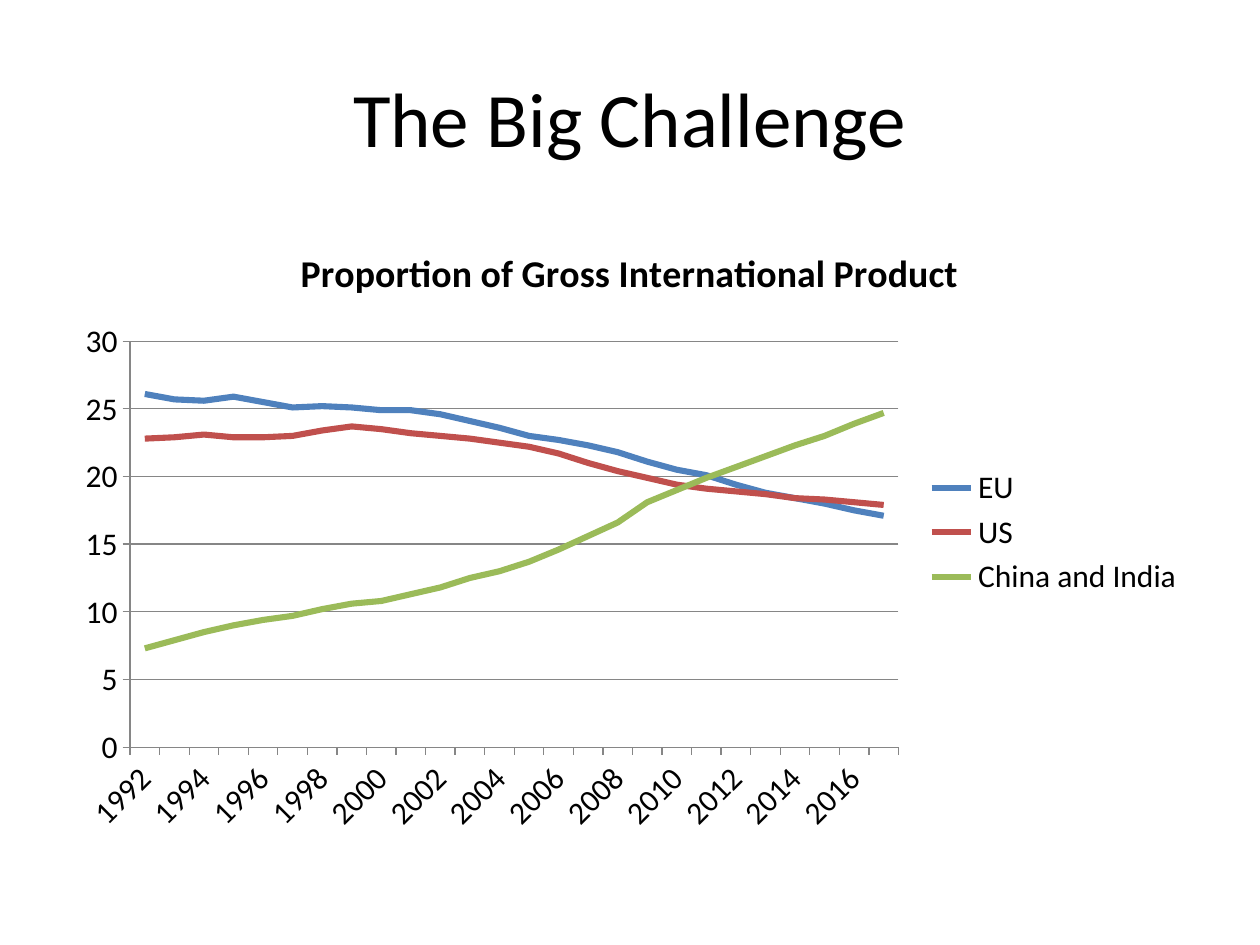
import pptx
import pptx.chart.data
import pptx.dml.color
import pptx.enum.chart
import pptx.enum.text
import pptx.util
from pptx.util import Pt

# Content
HEADING = "The Big Challenge"
CHART_TITLE = "Proportion of Gross International Product"
YEARS = range(1992, 2018)
SHARES = {
    "EU": [26.1, 25.7, 25.6, 25.9, 25.5, 25.1, 25.2, 25.1, 24.9, 24.9, 24.6, 24.1, 23.6,
           23, 22.7, 22.3, 21.8, 21.1, 20.5, 20.1, 19.4, 18.8, 18.4, 18, 17.5, 17.1],
    "US": [22.8, 22.9, 23.1, 22.9, 22.9, 23, 23.4, 23.7, 23.5, 23.2, 23, 22.8, 22.5,
           22.2, 21.7, 21, 20.4, 19.9, 19.4, 19.1, 18.9, 18.7, 18.4, 18.3, 18.1, 17.9],
    "China and India": [7.3, 7.9, 8.5, 9, 9.4, 9.7, 10.2, 10.6, 10.8, 11.3, 11.8, 12.5, 13,
                        13.7, 14.6, 15.6, 16.6, 18.1, 19, 19.9, 20.7, 21.5, 22.3, 23, 23.9, 24.7],
}
THEME = {
    "font": "Calibri",
    "text": "000000",
    "axis": "868686",
    "lines": ["4F81BD", "C0504D", "9BBB59"],
    "heading_size": 44,
    "chart_title_size": 21.6,
    "label_size": 18,
}
SLIDE_WIDTH, SLIDE_HEIGHT, MARGIN = 720, 540, 36
CONTENT_WIDTH = SLIDE_WIDTH - 2 * MARGIN


def rgb(value):
    return pptx.dml.color.RGBColor.from_string(value)


def style_font(font, size, bold=False):
    font.name = THEME["font"]
    font.size = Pt(size)
    font.bold = bold
    font.color.rgb = rgb(THEME["text"])


def style_line(line, color, width):
    line.color.rgb = rgb(color)
    line.width = Pt(width)


def add_heading(slide):
    heading = slide.shapes.add_textbox(Pt(MARGIN), Pt(21.6), Pt(CONTENT_WIDTH), Pt(90))
    frame = heading.text_frame
    frame.word_wrap = True
    frame.vertical_anchor = pptx.enum.text.MSO_ANCHOR.MIDDLE
    frame.text = HEADING
    frame.paragraphs[0].alignment = pptx.enum.text.PP_ALIGN.CENTER
    style_font(frame.paragraphs[0].runs[0].font, THEME["heading_size"])


def add_share_chart(slide):
    shares = pptx.chart.data.CategoryChartData()
    shares.categories = [str(year) for year in YEARS]
    for region, values in SHARES.items():
        shares.add_series(region, values)
    chart = slide.shapes.add_chart(
        pptx.enum.chart.XL_CHART_TYPE.LINE,
        Pt(MARGIN), Pt(126), Pt(CONTENT_WIDTH), Pt(356.4), shares).chart
    style_font(chart.font, THEME["label_size"])

    # Title and legend
    chart.has_title = True
    title = chart.chart_title.text_frame
    title.text = CHART_TITLE
    style_font(title.paragraphs[0].runs[0].font, THEME["chart_title_size"], bold=True)
    chart.has_legend = True
    chart.legend.position = pptx.enum.chart.XL_LEGEND_POSITION.RIGHT
    chart.legend.include_in_layout = False

    # Axes, with slanted labels for every second year
    for axis in (chart.category_axis, chart.value_axis):
        axis.major_tick_mark = pptx.enum.chart.XL_TICK_MARK.OUTSIDE
        axis.minor_tick_mark = pptx.enum.chart.XL_TICK_MARK.NONE
        style_line(axis.format.line, THEME["axis"], 0.75)
        style_font(axis.tick_labels.font, THEME["label_size"])
    year_axis = chart.category_axis._element
    year_axis.txPr.bodyPr.set("rot", "-2700000")
    label_skip = pptx.oxml.parse_xml(
        '<c:tickLblSkip xmlns:c="http://schemas.openxmlformats.org/drawingml/2006/chart" val="2"/>')
    year_axis.find(pptx.oxml.ns.qn("c:noMultiLvlLbl")).addprevious(label_skip)
    chart.value_axis.minimum_scale = 0
    chart.value_axis.maximum_scale = 30
    chart.value_axis.major_unit = 5
    chart.value_axis.has_major_gridlines = True
    style_line(chart.value_axis.major_gridlines.format.line, THEME["axis"], 0.75)

    # Region lines
    chart.plots[0].vary_by_categories = False
    for region, color in zip(chart.plots[0].series, THEME["lines"]):
        region.smooth = False
        region.marker.style = pptx.enum.chart.XL_MARKER_STYLE.NONE
        style_line(region.format.line, color, 3.5)


def main():
    deck = pptx.Presentation()
    deck.slide_width, deck.slide_height = Pt(SLIDE_WIDTH), Pt(SLIDE_HEIGHT)
    slide = deck.slides.add_slide(deck.slide_layouts[6])
    add_heading(slide)
    add_share_chart(slide)
    deck.save("out.pptx")


if __name__ == "__main__":
    main()
